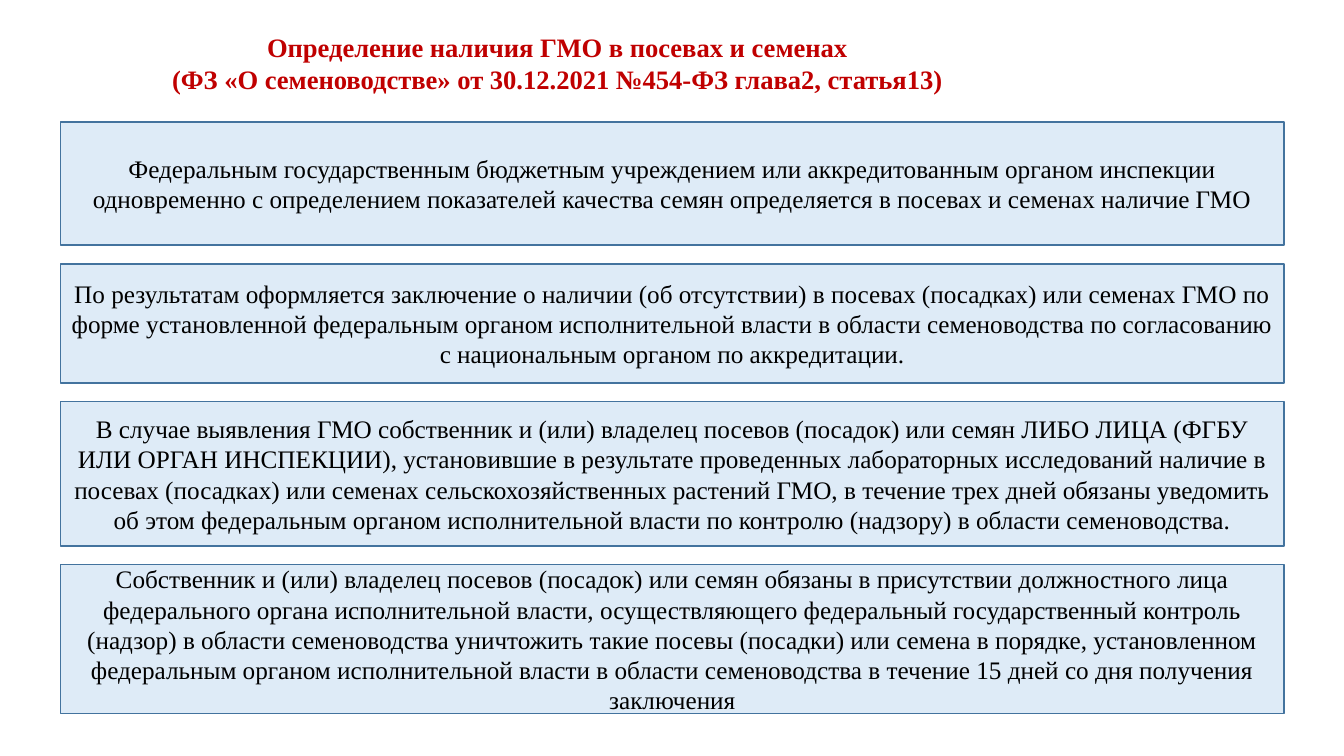
import pptx
import pptx.dml.color
import pptx.enum.shapes
import pptx.enum.text
import pptx.util


def color(value):
    return pptx.dml.color.RGBColor.from_string(value)


class SlideBuilder:
    font_name = "Times New Roman"
    title_size = 19
    body_size = 18
    title_color = "C00000"
    body_color = "000000"
    box_fill = "DEEBF7"
    box_line = "43739E"

    def __init__(self, slide):
        self.slide = slide

    def set_text(self, shape, text, size, font_color, bold=False):
        text_frame = shape.text_frame
        text_frame.text = text
        text_frame.word_wrap = True
        text_frame.vertical_anchor = pptx.enum.text.MSO_ANCHOR.MIDDLE
        for paragraph in text_frame.paragraphs:
            paragraph.alignment = pptx.enum.text.PP_ALIGN.CENTER
            for run in paragraph.runs:
                run.font.name = self.font_name
                run.font.size = pptx.util.Pt(size)
                run.font.bold = bold
                run.font.color.rgb = color(font_color)

    def title(self, text, left, top, width, height):
        shape = self.slide.shapes.add_textbox(
            *map(pptx.util.Pt, (left, top, width, height))
        )
        self.set_text(shape, text, self.title_size, self.title_color, bold=True)

    def box(self, text, left, top, width, height):
        shape = self.slide.shapes.add_shape(
            pptx.enum.shapes.MSO_SHAPE.RECTANGLE,
            *map(pptx.util.Pt, (left, top, width, height)),
        )
        shape.shadow.inherit = False
        shape.fill.solid()
        shape.fill.fore_color.rgb = color(self.box_fill)
        shape.line.color.rgb = color(self.box_line)
        shape.line.width = pptx.util.Pt(1)
        self.set_text(shape, text, self.body_size, self.body_color)


TITLE = (
    "Определение наличия ГМО в посевах и семенах\n"
    "(ФЗ «О семеноводстве» от 30.12.2021 №454-ФЗ глава2, статья13)"
)

STEPS = [
    (
        88,
        "Федеральным государственным бюджетным учреждением или аккредитованным "
        "органом инспекции одновременно с определением показателей качества семян "
        "определяется в посевах и семенах наличие ГМО",
    ),
    (
        85.2,
        "По результатам оформляется заключение о наличии (об отсутствии) в посевах "
        "(посадках) или семенах ГМО по форме установленной федеральным органом "
        "исполнительной власти в области семеноводства по согласованию с "
        "национальным органом по аккредитации.",
    ),
    (
        103,
        "В случае выявления ГМО собственник и (или) владелец посевов (посадок) или "
        "семян ЛИБО ЛИЦА (ФГБУ ИЛИ ОРГАН ИНСПЕКЦИИ), установившие в результате "
        "проведенных лабораторных исследований наличие в посевах (посадках) или "
        "семенах сельскохозяйственных растений ГМО, в течение трех дней обязаны "
        "уведомить об этом федеральным органом исполнительной власти по контролю "
        "(надзору) в области семеноводства.",
    ),
    (
        106.5,
        "Собственник и (или) владелец посевов (посадок) или семян обязаны в "
        "присутствии должностного лица федерального органа исполнительной власти, "
        "осуществляющего федеральный государственный контроль (надзор) в области "
        "семеноводства уничтожить такие посевы (посадки) или семена в порядке, "
        "установленном федеральным органом исполнительной власти в области "
        "семеноводства в течение 15 дней со дня получения заключения",
    ),
]

STEP_LEFT = 43.2
STEP_WIDTH = 874
STEP_GAP = 13.3
FIRST_STEP_TOP = 87.2


def main():
    presentation = pptx.Presentation()
    presentation.slide_width = pptx.util.Pt(960)
    presentation.slide_height = pptx.util.Pt(540)
    slide = presentation.slides.add_slide(presentation.slide_layouts[6])
    builder = SlideBuilder(slide)
    builder.title(TITLE, 26.6, 15.1, 743, 59)
    top = FIRST_STEP_TOP
    for height, text in STEPS:
        builder.box(text, STEP_LEFT, top, STEP_WIDTH, height)
        top += height + STEP_GAP
    presentation.save("out.pptx")


if __name__ == "__main__":
    main()
